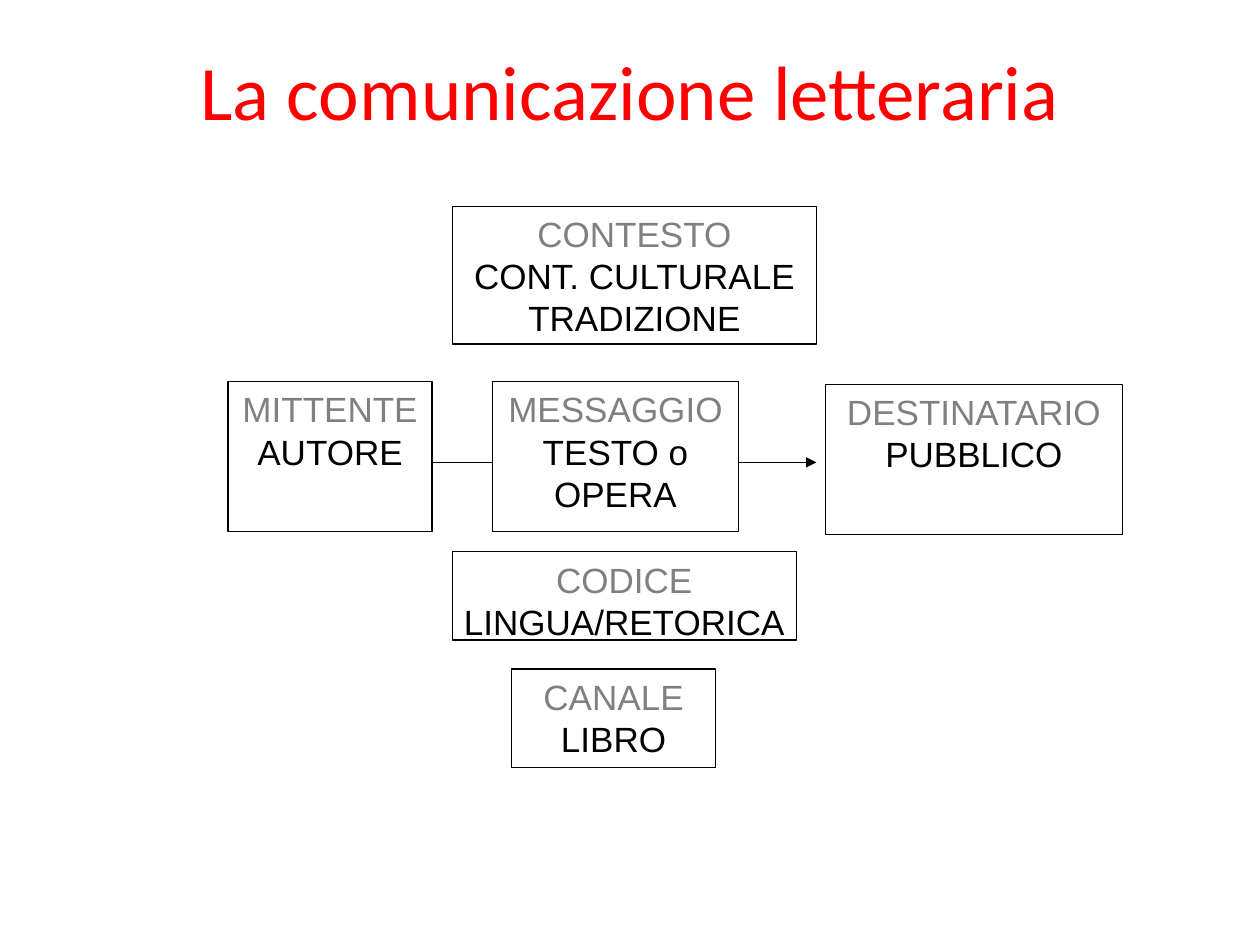
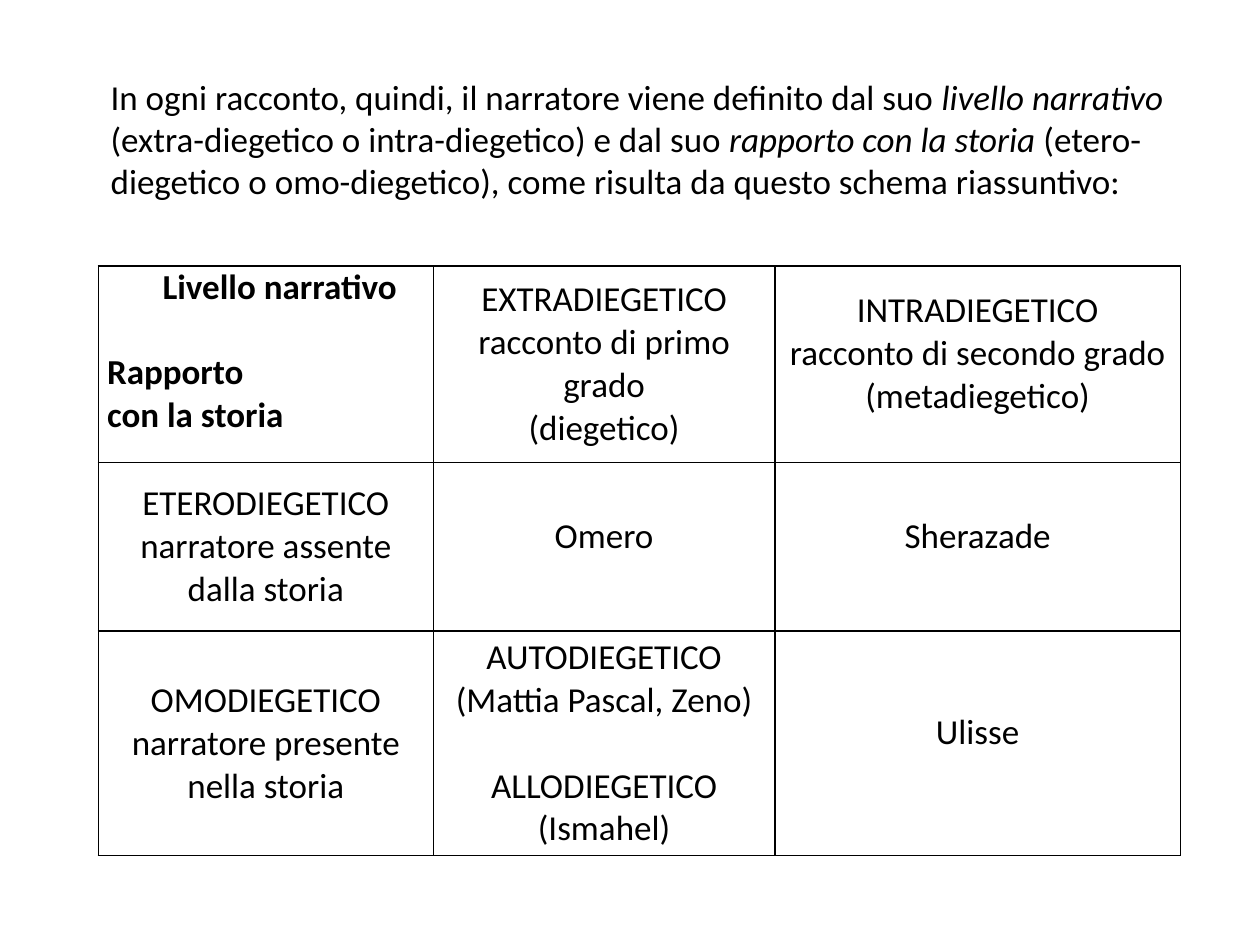
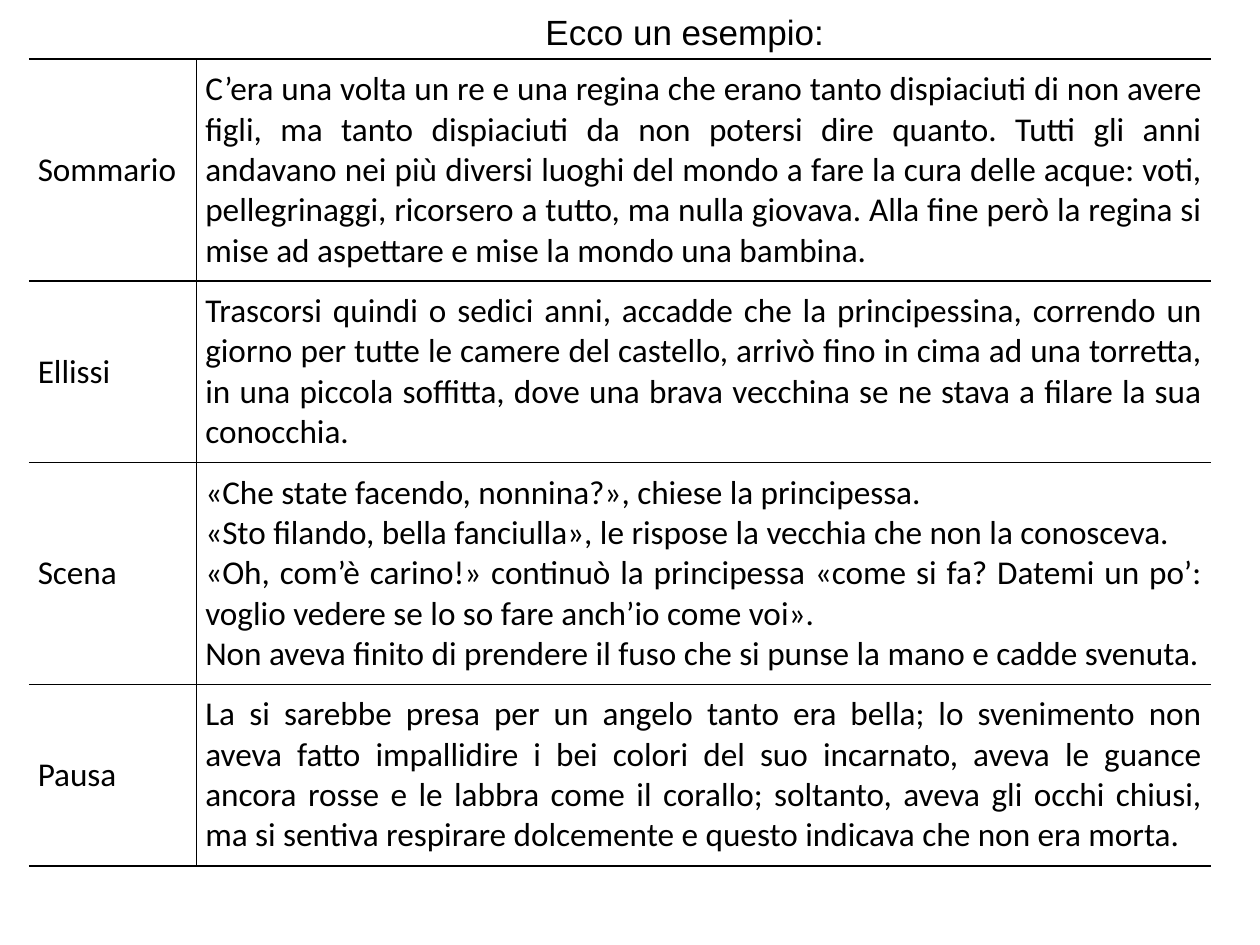
from dataclasses import dataclass

from lxml import etree
from pptx import Presentation
from pptx import util as u
from pptx.dml.color import RGBColor
from pptx.enum import shapes, text
from pptx.oxml.ns import qn

IN, PT = u.Inches, u.Pt
AL, ANC = text.PP_ALIGN, text.MSO_ANCHOR


@dataclass(frozen=True)
class Theme:
    ink: str = "000000"
    paper: str = "FFFFFF"
    grey: str = "808080"
    red: str = "FF0000"
    sans: str = "Arial"
    body: str = "Calibri"
    head: float = 44
    main: float = 20
    small: float = 19
    thin: float = 0.75
    rule: float = 1
    gap: float = 24.4    # one line of main text
    tight: float = 12.5  # fixed line pitch


T = Theme()


# Shared helpers
def rgb(code):
    return RGBColor.from_string(code)


def style(par, font=T.body, size=T.main, color=T.ink, bold=False, align=AL.LEFT):
    par.alignment = align
    for run in par.runs:
        run.font.name, run.font.size = font, PT(size)
        run.font.bold = bold
        run.font.color.rgb = rgb(color)


def write(frame, lines, **look):
    frame.text = "\n".join(lines)
    for par in frame.paragraphs:
        style(par, **look)
    return frame.paragraphs


def label(slide, box, words, wrap=True, anchor=ANC.TOP, **look):
    frame = slide.shapes.add_textbox(*map(IN, box)).text_frame
    frame.word_wrap, frame.vertical_anchor = wrap, anchor
    return write(frame, [words], **look)[0]


def edge(cell, sides):
    """Rule the named sides of a cell and clear the others."""
    props = cell._tc.get_or_add_tcPr()
    for side in "LRTB":
        line = etree.SubElement(props, qn("a:ln" + side), w=str(PT(T.rule)))
        if side in sides:
            fill = etree.SubElement(line, qn("a:solidFill"))
            etree.SubElement(fill, qn("a:srgbClr"), val=T.ink)
        else:
            etree.SubElement(line, qn("a:noFill"))
    cell.fill.background()


def grid(slide, left, top, cols, rows, pad, sides):
    """Add a plain table; sides gives the ruled sides for each column."""
    table = slide.shapes.add_table(
        len(rows), len(cols), IN(left), IN(top), IN(sum(cols)), IN(sum(rows))).table
    table.first_row = table.horz_banding = False
    for col, width in zip(table.columns, cols):
        col.width = IN(width)
    for row, height in zip(table.rows, rows):
        row.height = IN(height)
        for cell, ruled in zip(row.cells, sides):
            cell.margin_left = cell.margin_right = IN(0.07)
            cell.margin_top = cell.margin_bottom = IN(pad)
            cell.vertical_anchor = ANC.MIDDLE
            edge(cell, ruled)
    return table


# Slide 1: communication diagram
def node(slide, box, role, words):
    shape = slide.shapes.add_shape(shapes.MSO_SHAPE.RECTANGLE, *map(IN, box))
    shape.shadow.inherit = False
    shape.fill.solid()
    shape.fill.fore_color.rgb = rgb(T.paper)
    shape.line.color.rgb, shape.line.width = rgb(T.ink), PT(T.thin)
    frame = shape.text_frame
    frame.word_wrap, frame.vertical_anchor = True, ANC.TOP
    frame.margin_left = frame.margin_right = IN(0.05)
    pars = write(frame, [role, words], font=T.sans, align=AL.CENTER)
    style(pars[0], font=T.sans, color=T.grey, align=AL.CENTER)


def arrow(slide, left, top, width):
    line = slide.shapes.add_connector(
        shapes.MSO_CONNECTOR.STRAIGHT, IN(left), IN(top), IN(left + width), IN(top))
    line.line.color.rgb, line.line.width = rgb(T.ink), PT(T.thin)
    etree.SubElement(line.line._get_or_add_ln(), qn("a:tailEnd"), type="triangle")
    etree.SubElement(line._element.spPr, qn("a:effectLst"))


def diagram(slide, left, top):
    # Main chain: each arrow runs behind the box that follows it
    row, tall, reach = top + 1.39, 1.19, 0.62
    node(slide, (left, row, 1.62, tall), "MITTENTE", "AUTORE")
    arrow(slide, left + 1.63, row + 0.64, reach)
    node(slide, (left + 2.1, row, 1.95, tall), "MESSAGGIO", "TESTO o OPERA")
    arrow(slide, left + 4.05, row + 0.64, reach)
    node(slide, (left + 4.74, row + 0.02, 2.36, tall), "DESTINATARIO", "PUBBLICO")
    # Factors below and above the chain
    node(slide, (left + 1.78, top + 2.74, 2.73, 0.7), "CODICE", "LINGUA/RETORICA")
    node(slide, (left + 2.25, top + 3.67, 1.62, 0.78), "CANALE", "LIBRO")
    node(slide, (left + 1.78, top, 2.89, 1.09), "CONTESTO",
         "CONT. CULTURALE TRADIZIONE")


# Slide 2: narrator types
INTRO = [
    "In ogni racconto, quindi, il narratore viene definito dal suo ",
    "livello narrativo",
    " (extra-diegetico o intra-diegetico) e dal suo ",
    "rapporto con la storia",
    " (etero-diegetico o omo-diegetico), come risulta da questo schema riassuntivo:",
]
TYPES = [
    [["Livello narrativo", "Rapporto", "con la storia"],
     ["EXTRADIEGETICO", "racconto di primo grado", "(diegetico)"],
     ["INTRADIEGETICO", "racconto di secondo grado", "(metadiegetico)"]],
    [["ETERODIEGETICO", "narratore assente", "dalla storia"],
     ["Omero"], ["Sherazade"]],
    [["OMODIEGETICO", "narratore presente", "nella storia"],
     ["AUTODIEGETICO", "(Mattia Pascal, Zeno)", "ALLODIEGETICO", "(Ismahel)"],
     ["Ulisse"]],
]
TIGHT = {"INTRADIEGETICO", "Omero", "Sherazade", "Ulisse"}
SPACED = {"Rapporto", "ALLODIEGETICO"}


def intro(slide, box):
    par = label(slide, box, "")
    for spot, part in enumerate(INTRO):
        run = par.add_run()
        run.text, run.font.italic = part, spot % 2 == 1
    style(par)


def matrix(slide, left, top):
    table = grid(slide, left, top, [2.66, 2.71, 3.22], [1.56, 1.34, 1.78],
                 0, ["LRTB"] * 3)
    corner = table.cell(0, 0)
    for row, line in zip(table.rows, TYPES):
        for cell, words in zip(row.cells, line):
            for par in write(cell.text_frame, words, align=AL.CENTER):
                if par.text in TIGHT:
                    par.line_spacing = PT(T.tight)
                if par.text in SPACED:
                    par.space_before = PT(T.gap)
    # Corner cell names both axes
    corner.vertical_anchor = ANC.TOP
    pars = corner.text_frame.paragraphs
    for par in pars:
        style(par, bold=True, align=AL.JUSTIFY)
    pars[0]._p.get_or_add_pPr().set("marL", str(IN(0.44)))


# Slide 3: narrative pace
TALE = [
    ("Sommario", [
        "C’era una volta un re e una regina che erano tanto dispiaciuti di non avere "
        "figli, ma tanto dispiaciuti da non potersi dire quanto. Tutti gli anni "
        "andavano nei più diversi luoghi del mondo a fare la cura delle acque: voti, "
        "pellegrinaggi, ricorsero a tutto, ma nulla giovava. Alla fine però la regina "
        "si mise ad aspettare e mise la mondo una bambina."]),
    ("Ellissi", [
        "Trascorsi quindi o sedici anni, accadde che la principessina, correndo un "
        "giorno per tutte le camere del castello, arrivò fino in cima ad una torretta, "
        "in una piccola soffitta, dove una brava vecchina se ne stava a filare la sua "
        "conocchia."]),
    ("Scena", [
        "«Che state facendo, nonnina?», chiese la principessa.",
        "«Sto filando, bella fanciulla», le rispose la vecchia che non la conosceva.",
        "«Oh, com’è carino!» continuò la principessa «come si fa? Datemi un po’: "
        "voglio vedere se lo so fare anch’io come voi».",
        "Non aveva finito di prendere il fuso che si punse la mano e cadde svenuta."]),
    ("Pausa", [
        "La si sarebbe presa per un angelo tanto era bella; lo svenimento non aveva "
        "fatto impallidire i bei colori del suo incarnato, aveva le guance ancora rosse "
        "e le labbra come il corallo; soltanto, aveva gli occhi chiusi, ma si sentiva "
        "respirare dolcemente e questo indicava che non era morta."]),
]


def story(slide, left, top):
    table = grid(slide, left, top, [1.33, 8.05], [1.74, 1.42] * 2,
                 0.08, ["RTB", "LTB"])
    for row, (pace, lines) in zip(table.rows, TALE):
        name, tale = row.cells
        write(name.text_frame, [pace], size=T.small)
        write(tale.text_frame, lines, size=T.small, align=AL.JUSTIFY)
        tale.vertical_anchor = ANC.TOP


def main():
    deck = Presentation()
    deck.slide_width, deck.slide_height = IN(10), IN(7.5)
    first, second, third = (
        deck.slides.add_slide(deck.slide_layouts[6]) for _ in range(3))

    diagram(first, 1.81, 1.64)
    label(first, (0.5, 0.3, 9, 1.25), "La comunicazione letteraria",
          size=T.head, color=T.red, align=AL.CENTER)

    matrix(second, 0.78, 2.11)
    intro(second, (0.78, 0.55, 8.67, 1.11))

    story(third, 0.23, 0.47)
    label(third, (4.22, 0.03, 2.43, 0.44), "Ecco un esempio:", wrap=False,
          anchor=ANC.MIDDLE, font=T.sans, align=AL.CENTER)

    deck.save("out.pptx")


if __name__ == "__main__":
    main()
